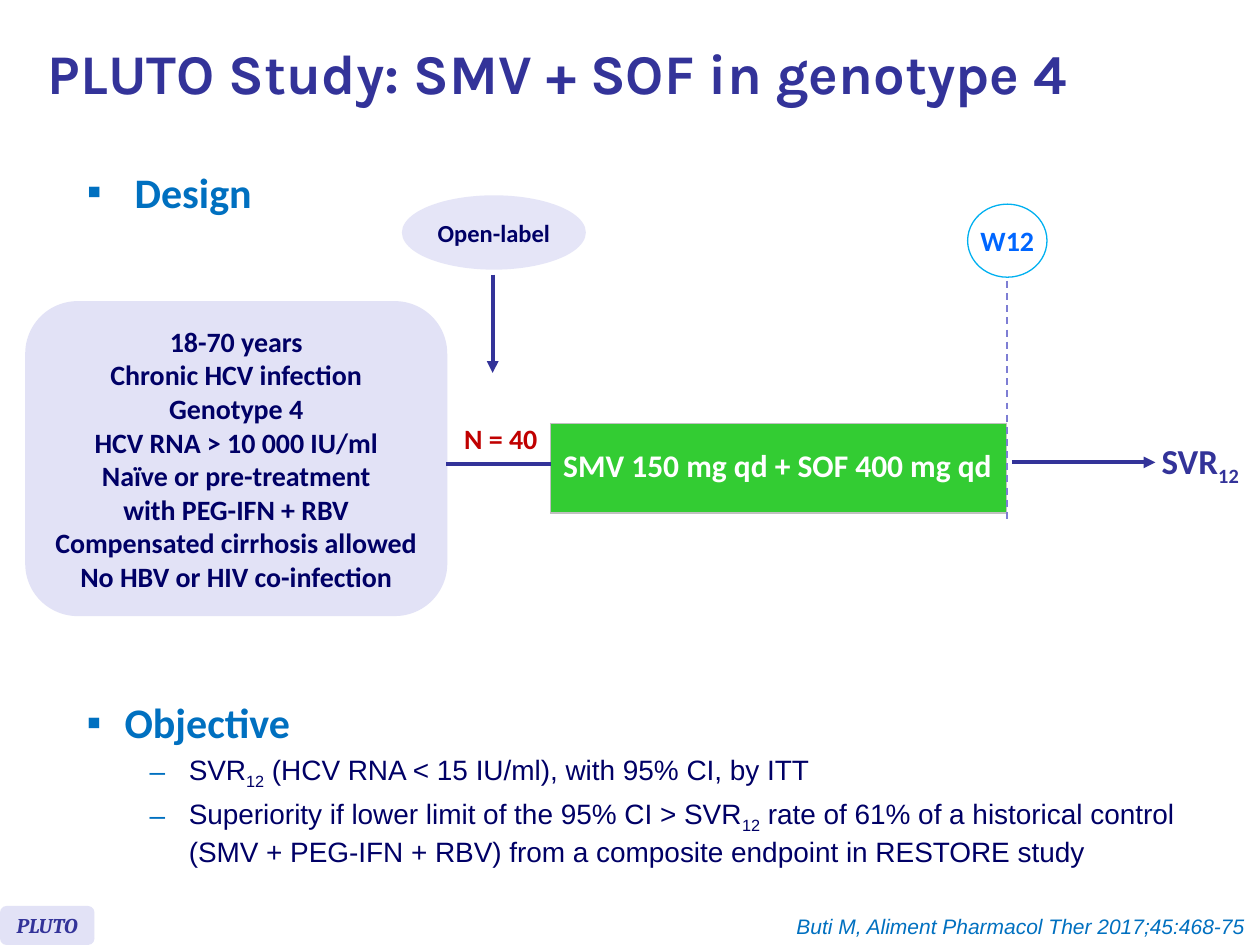
from lxml.etree import SubElement
from pptx import Presentation
from pptx.dml.color import RGBColor
from pptx.enum.dml import MSO_LINE
from pptx.enum.shapes import MSO_CONNECTOR, MSO_SHAPE
from pptx.enum.text import MSO_ANCHOR, PP_ALIGN
from pptx.oxml.ns import qn
from pptx.util import Inches, Pt

COLORS = {
    "indigo": "333399", "navy": "000066", "blue": "0070C0", "bright": "0066FF",
    "sky": "00B0F0", "red": "C00000", "green": "33CC33", "white": "FFFFFF",
    "lavender": "E2E2F6", "pale": "E5E5F7", "violet": "7E7ED4", "gray": "C0C0C0",
}
COLS, ROWS = 100, 75
CRITERIA = [
    "18-70 years\vChronic HCV infection",
    "Genotype 4",
    "HCV RNA > 10 000 IU/ml\vNaïve or pre-treatment",
    "with PEG-IFN + RBV",
    "Compensated cirrhosis allowed\vNo HBV or HIV co-infection",
]
ENDPOINTS = [
    "SVR|12| (HCV RNA < 15 IU/ml), with 95% CI, by ITT",
    "Superiority if lower limit of the 95% CI > SVR|12| rate of 61% of a historical "
    "control (SMV + PEG-IFN + RBV) from a composite endpoint in RESTORE study",
]


def rgb(name):
    return RGBColor.from_string(COLORS[name])


class SlideBuilder:
    """Places styled elements on a grid of COLS by ROWS."""

    def __init__(self, prs):
        self.col = prs.slide_width / COLS
        self.row = prs.slide_height / ROWS
        self.slide = prs.slides.add_slide(prs.slide_layouts[5])
        self.shapes = self.slide.shapes

    def grid(self, x, y, w, h):
        return [int(v) for v in (x * self.col, y * self.row, w * self.col, h * self.row)]

    def add_text(self, p, text, size, color, font="Calibri", bold=True, italic=False):
        """Fill a paragraph; parts between bars become subscripts."""
        for i, part in enumerate(text.split("|")):
            for j, line in enumerate(part.split("\v")):
                if j:
                    p.add_line_break()
                if not line:
                    continue
                r = p.add_run()
                r.text = line
                f = r.font
                f.size, f.name, f.bold, f.italic = Pt(size), font, bold, italic
                f.color.rgb = rgb(color)
                if i % 2:
                    r._r.get_or_add_rPr().set("baseline", "-25000")

    def title(self, box, text):
        sp = self.shapes.title
        sp.left, sp.top, sp.width, sp.height = self.grid(*box)
        tf = sp.text_frame
        tf.vertical_anchor, tf.word_wrap = MSO_ANCHOR.MIDDLE, True
        p = tf.paragraphs[0]
        p.alignment, p.line_spacing = PP_ALIGN.LEFT, 0.85
        self.add_text(p, text, 32, "indigo", "Karla")

    def label(self, box, text, size, color, align=PP_ALIGN.LEFT, **style):
        tf = self.shapes.add_textbox(*self.grid(*box)).text_frame
        tf.word_wrap = False
        tf.paragraphs[0].alignment = align
        self.add_text(tf.paragraphs[0], text, size, color, **style)

    def shape(self, kind, box, fill, lines, size, color, line=None, wrap=False, **style):
        sp = self.shapes.add_shape(kind, *self.grid(*box))
        sp.shadow.inherit = False
        sp.fill.solid()
        sp.fill.fore_color.rgb = rgb(fill)
        if line:
            sp.line.color.rgb = rgb(line)
            sp.line.width = Pt(0.75)
        else:
            sp.line.fill.background()
        tf = sp.text_frame
        tf.word_wrap, tf.vertical_anchor = wrap, MSO_ANCHOR.MIDDLE
        for i, text in enumerate(lines):
            p = tf.add_paragraph() if i else tf.paragraphs[0]
            p.alignment = PP_ALIGN.CENTER
            self.add_text(p, text, size, color, **style)

    def line(self, start, end, color="indigo", width=2.25, dash=None, arrow=False):
        x1, y1, x2, y2 = self.grid(*start, *end)
        c = self.shapes.add_connector(MSO_CONNECTOR.STRAIGHT, x1, y1, x2, y2)
        c.line.color.rgb = rgb(color)
        c.line.width = Pt(width)
        if dash:
            c.line.dash_style = dash
        if arrow:
            SubElement(c.line._get_or_add_ln(), qn("a:tailEnd"), type="triangle")
        SubElement(c._element.spPr, qn("a:effectLst"))

    def bar(self, box, text):
        """One-cell table showing a treatment arm."""
        table = self.shapes.add_table(1, 1, *self.grid(*box)).table
        table.first_row = table.horz_banding = False
        cell = table.cell(0, 0)
        tc_pr = cell._tc.get_or_add_tcPr()
        for side in "LRTB":
            ln = SubElement(tc_pr, qn(f"a:ln{side}"), w=str(Pt(1)))
            SubElement(SubElement(ln, qn("a:solidFill")), qn("a:srgbClr"), val=COLORS["gray"])
        cell.fill.solid()
        cell.fill.fore_color.rgb = rgb("green")
        cell.vertical_anchor = MSO_ANCHOR.MIDDLE
        p = cell.text_frame.paragraphs[0]
        p.line_spacing = 0.8
        self.add_text(p, text, 18, "white")

    def bullet(self, p, char, margin, hang):
        p_pr = p._p.get_or_add_pPr()
        p_pr.set("marL", str(Inches(margin)))
        p_pr.set("indent", str(-Inches(hang)))
        SubElement(SubElement(p_pr, qn("a:buClr")), qn("a:srgbClr"), val=COLORS["blue"])
        SubElement(p_pr, qn("a:buFont"), typeface="Arial")
        SubElement(p_pr, qn("a:buChar"), char=char)

    def section(self, box, heading, indent, items=()):
        tf = self.shapes.add_textbox(*self.grid(*box)).text_frame
        tf.word_wrap = True
        p = tf.paragraphs[0]
        self.bullet(p, "▪", indent, indent)
        self.add_text(p, heading, 24, "blue")
        for item in items:
            p = tf.add_paragraph()
            p.level = 1
            self.bullet(p, "–", 0.81, 0.31)
            p.space_before = Pt(3.2)
            self.add_text(p, item, 16, "navy", "Arial", bold=False)


def main():
    prs = Presentation()
    prs.slide_width, prs.slide_height = Inches(10), Inches(7.5)
    s = SlideBuilder(prs)
    oval, rounded = MSO_SHAPE.OVAL, MSO_SHAPE.ROUNDED_RECTANGLE

    s.title((2.8, 0.8, 98.4, 10.7), "PLUTO Study: SMV + SOF in genotype 4")
    s.bar((43.7, 33.6, 36.2, 7.1), "SMV 150 mg qd + SOF 400 mg qd")
    s.label((35.8, 33, 7.9, 3.7), "N = 40", 16, "red", PP_ALIGN.CENTER)
    s.line((79.9, 22.3), (79.9, 41.5), "violet", 1, MSO_LINE.DASH)
    s.shape(oval, (76.8, 16.2, 6.3, 5.8), "white", ["W12"], 16, "bright", line="sky")
    s.line((80.3, 36.7), (91.7, 36.7), arrow=True)
    s.shape(rounded, (2, 23.9, 33.5, 25), "lavender", CRITERIA, 16, "navy", wrap=True)
    s.shape(oval, (31.9, 15.5, 14.6, 5.9), "pale", ["Open-label"], 14, "navy")
    s.line((35.4, 36.8), (43.7, 36.8))
    s.line((39.1, 21.8), (39.1, 29.6), arrow=True)
    s.label((91.2, 34.4, 8.5, 4.4), "SVR|12", 20, "indigo")
    s.shape(rounded, (0, 71.9, 7.5, 3.1), "lavender", ["PLUTO"], 12, "indigo",
            font="Cambria", italic=True)
    s.section((5.9, 12.7, 19.8, 6.3), "Design", 0.38)
    s.section((5.9, 54.8, 91.3, 15.7), "Objective", 0.3, ENDPOINTS)
    s.label((61.4, 72, 38.4, 3), "Buti M, Aliment Pharmacol Ther 2017;45:468-75", 12,
            "blue", PP_ALIGN.RIGHT, font="Arial", bold=False, italic=True)
    prs.save("out.pptx")


if __name__ == "__main__":
    main()
